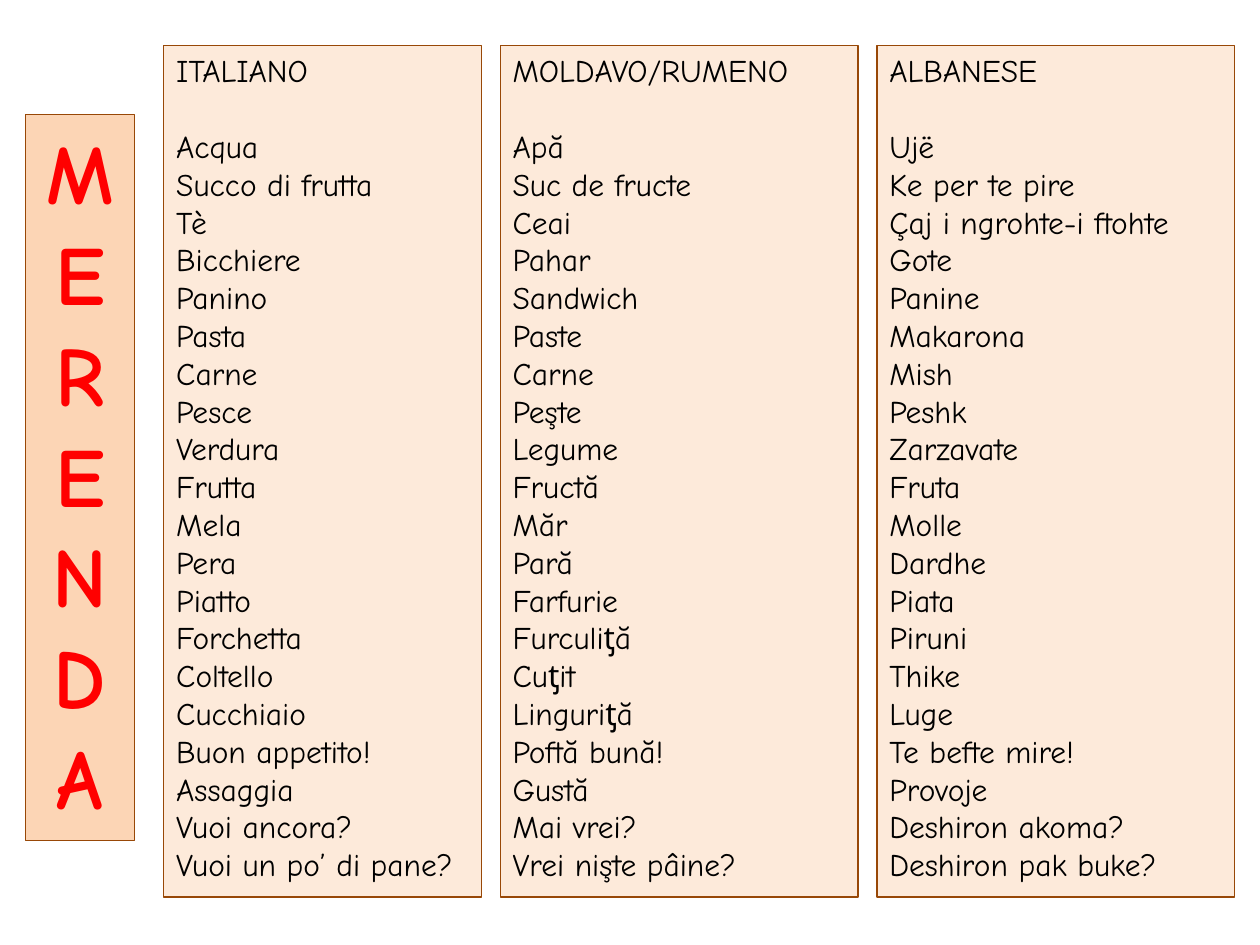
from pptx import Presentation
from pptx.dml.color import RGBColor
from pptx.enum.shapes import MSO_SHAPE
from pptx.enum.text import MSO_ANCHOR, PP_ALIGN
from pptx.util import Inches, Pt

COLOURS = {
    "title_fill": "FCD5B5",
    "list_fill": "FDEADA",
    "border": "984807",
    "title": "FF0000",
    "text": "000000",
}

LANGUAGES = ("ITALIANO", "MOLDAVO/RUMENO", "ALBANESE")
VOCABULARY = [
    ("Acqua", "Apă", "Ujë"),
    ("Succo di frutta", "Suc de fructe", "Ke per te pire"),
    ("Tè", "Ceai", "Çaj i ngrohte-i ftohte"),
    ("Bicchiere", "Pahar", "Gote"),
    ("Panino", "Sandwich", "Panine"),
    ("Pasta", "Paste", "Makarona"),
    ("Carne", "Carne", "Mish"),
    ("Pesce", "Peşte", "Peshk"),
    ("Verdura", "Legume", "Zarzavate"),
    ("Frutta", "Fructă", "Fruta"),
    ("Mela", "Măr", "Molle"),
    ("Pera", "Pară", "Dardhe"),
    ("Piatto", "Farfurie", "Piata"),
    ("Forchetta", "Furculiƫă", "Piruni"),
    ("Coltello", "Cuƫit", "Thike"),
    ("Cucchiaio", "Linguriƫă", "Luge"),
    ("Buon appetito!", "Poftă bună!", "Te befte mire!"),
    ("Assaggia", "Gustă", "Provoje"),
    ("Vuoi ancora?", "Mai vrei?", "Deshiron akoma?"),
    ("Vuoi un po’ di pane?", "Vrei nişte pâine?", "Deshiron pak buke?"),
]

# Lengths in inches
LIST_TOP, LIST_HEIGHT = 0.36, 6.76
LIST_LEFT, LIST_GAP = 1.3, 0.15
LIST_WIDTHS = (2.52, 2.84, 2.84)
LINE_PITCH = 21.6  # points


class Page:
    """The current slide together with its font and colours."""

    font_name = "Comic Neue"

    def __init__(self, deck):
        self.slide = deck.slides.add_slide(deck.slide_layouts[6])

    def panel(self, left, top, width, height, fill):
        box = self.slide.shapes.add_shape(
            MSO_SHAPE.RECTANGLE, *map(Inches, (left, top, width, height)))
        box.shadow.inherit = False
        box.fill.solid()
        box.fill.fore_color.rgb = RGBColor.from_string(COLOURS[fill])
        box.line.color.rgb = RGBColor.from_string(COLOURS["border"])
        box.line.width = Pt(0.75)
        box.text_frame.word_wrap = True
        box.text_frame.vertical_anchor = MSO_ANCHOR.TOP
        return box

    def set_lines(self, box, lines, size, colour, align, bold=False):
        box.text_frame.text = "\n".join(lines)
        for para in box.text_frame.paragraphs:
            para.alignment = align
            for span in para.runs:
                span.font.name = self.font_name
                span.font.size = Pt(size)
                span.font.bold = bold
                span.font.color.rgb = RGBColor.from_string(COLOURS[colour])

    def vertical_title(self, word):
        box = self.panel(0.2, 0.91, 0.87, 5.76, "title_fill")
        self.set_lines(box, word, 48, "title", PP_ALIGN.CENTER, bold=True)

    def word_list(self, left, width, heading, words):
        box = self.panel(left, LIST_TOP, width, LIST_HEIGHT, "list_fill")
        self.set_lines(box, [heading, *words], 18, "text", PP_ALIGN.LEFT)
        box.text_frame.paragraphs[0].space_after = Pt(LINE_PITCH)


def main():
    deck = Presentation()
    deck.slide_width, deck.slide_height = Inches(10), Inches(7.5)
    page = Page(deck)
    page.vertical_title("MERENDA")
    left = LIST_LEFT
    for heading, width, words in zip(LANGUAGES, LIST_WIDTHS, zip(*VOCABULARY)):
        page.word_list(left, width, heading, words)
        left += width + LIST_GAP
    deck.save("out.pptx")


if __name__ == "__main__":
    main()
